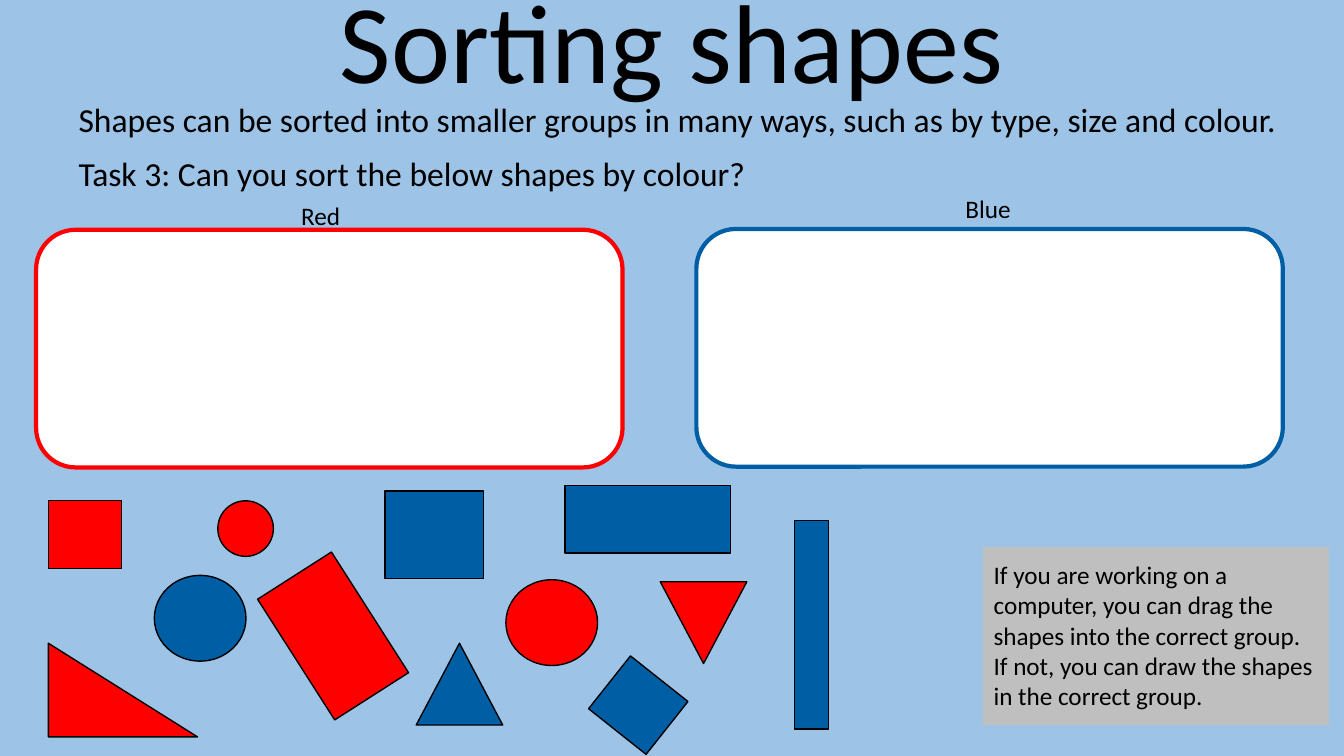
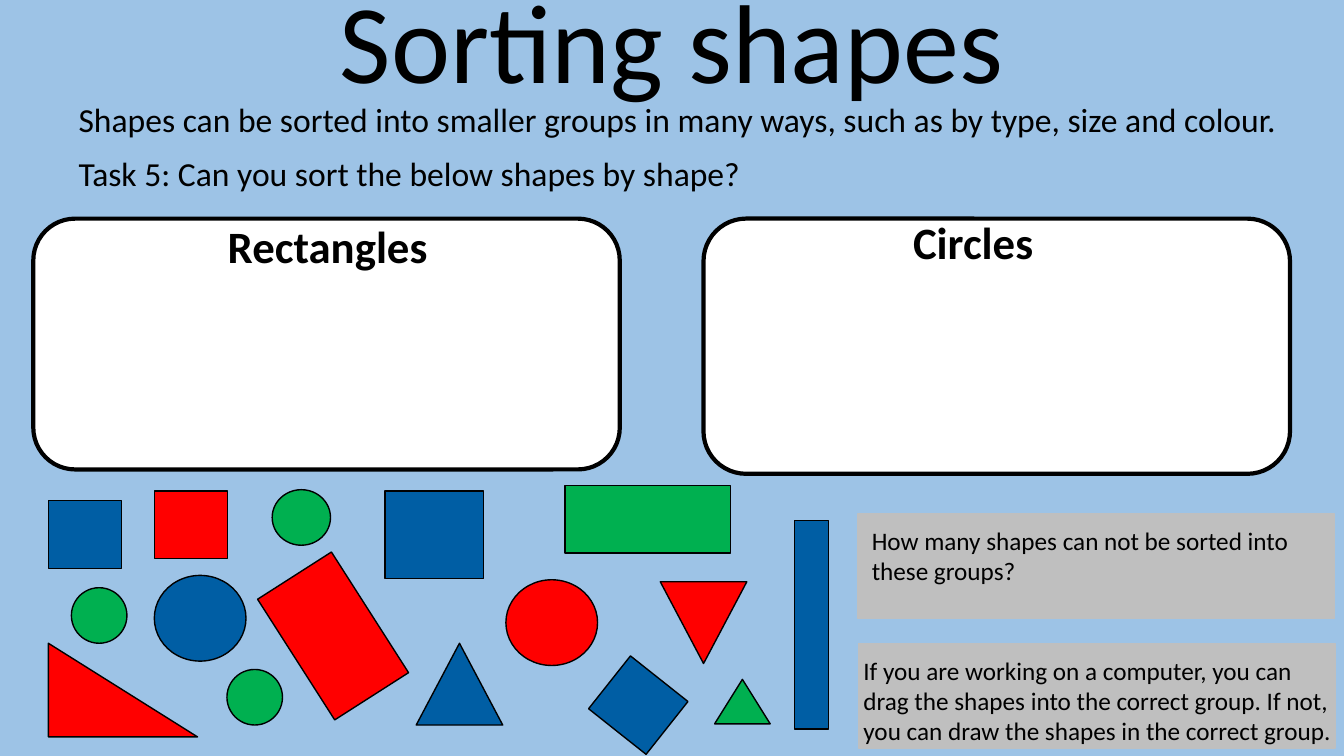
from dataclasses import dataclass, replace

from pptx import Presentation
from pptx.dml.color import RGBColor
from pptx.enum.shapes import MSO_SHAPE
from pptx.enum.text import MSO_AUTO_SIZE, PP_ALIGN
from pptx.util import Cm, Pt

RECT = MSO_SHAPE.RECTANGLE
ROUNDED = MSO_SHAPE.ROUNDED_RECTANGLE
ELLIPSE = MSO_SHAPE.OVAL
TRIANGLE = MSO_SHAPE.ISOSCELES_TRIANGLE
LEFT, CENTER = PP_ALIGN.LEFT, PP_ALIGN.CENTER
GROW = MSO_AUTO_SIZE.SHAPE_TO_FIT_TEXT

FONT = "Calibri"
SKY, WHITE, BLACK, GREY = "9DC3E6", "FFFFFF", "000000", "BFBFBF"
RED, BLUE, GREEN = "FF0000", "005EA4", "00B050"

INTRO = ("Shapes can be sorted into smaller groups in many ways, "
         "such as by type, size and colour.")
DRAG_HINT = ("If you are working on a computer, you can drag the shapes into the "
             "correct group. If not, you can draw the shapes in the correct group.")


@dataclass(frozen=True)
class Figure:
    """A drawn shape; lengths in centimetres."""
    kind: MSO_SHAPE
    left: float
    top: float
    width: float
    height: float
    fill: str
    rotation: float = 0
    apex: float | None = None
    line: str = BLACK
    weight: float = 1


@dataclass(frozen=True)
class Caption:
    """A text box; lengths in centimetres, one string per paragraph."""
    paragraphs: tuple[str, ...]
    left: float
    top: float
    width: float
    height: float
    size: float = 18
    bold: bool = False
    align: PP_ALIGN = LEFT
    wrap: bool = True
    gap: float = 0


@dataclass(frozen=True)
class Task:
    question: str
    figures: tuple[Figure, ...]
    captions: tuple[Caption, ...]


def sorting_box(left: float, top: float, height: float, line: str) -> Figure:
    return Figure(ROUNDED, left, top, 14.78, height, WHITE, line=line, weight=3)


def note_panel(left: float, top: float, width: float, height: float) -> Figure:
    return Figure(RECT, left, top, width, height, GREY, line=GREY)


def small_circle(left: float, top: float, fill: str) -> Figure:
    return Figure(ELLIPSE, left, top, 1.4, 1.4, fill)


def group_heading(name: str, left: float, top: float) -> Caption:
    return Caption((name,), left, top, 10, 1.63, size=32, bold=True)


def group_label(name: str, left: float, top: float) -> Caption:
    return Caption((name,), left, top, 5.97, 1.02)


# Shapes to sort that appear in both tasks
SQUARE = Figure(RECT, 1.22, 12.62, 1.85, 1.7, RED)
WIDE_BAR = Figure(RECT, 15.47, 11, 1.7, 4.17, BLUE, rotation=270)
COMMON_FIGURES = (
    Figure(ELLIPSE, 3.89, 14.5, 2.31, 2.16, BLUE),
    Figure(TRIANGLE, 1.22, 16.21, 3.76, 2.36, RED, apex=0),
    Figure(RECT, 7.29, 14.22, 2.21, 3.61, RED, rotation=327.4),
    Figure(RECT, 9.7, 12.37, 2.49, 2.21, BLUE),
    Figure(TRIANGLE, 16.64, 14.66, 2.18, 2.06, RED, rotation=180),
    Figure(ELLIPSE, 12.75, 14.61, 2.31, 2.16, RED),
    Figure(RECT, 15.16, 16.92, 1.85, 1.7, BLUE, rotation=38.4),
    Figure(TRIANGLE, 10.49, 16.21, 2.18, 2.06, BLUE),
    Figure(RECT, 20.02, 13.11, 0.86, 5.26, BLUE, rotation=180),
)

TASKS = (
    Task(
        "Task 3: Can you sort the below shapes by colour?",
        (
            sorting_box(0.91, 5.79, 5.99, RED),
            sorting_box(17.55, 5.77, 5.99, BLUE),
            SQUARE,
            small_circle(5.49, 12.62, RED),
            WIDE_BAR,
            *COMMON_FIGURES,
            note_panel(24.79, 13.79, 8.69, 4.47),
        ),
        (
            Caption((DRAG_HINT,), 24.79, 13.97, 8.69, 4.11),
            group_label("Blue", 24.08, 4.75),
            group_label("Red", 7.34, 4.93),
        ),
    ),
    Task(
        "Task 5: Can you sort the below shapes by shape?",
        (
            sorting_box(0.84, 5.51, 6.32, BLACK),
            sorting_box(17.73, 5.51, 6.43, BLACK),
            replace(SQUARE, fill=BLUE),
            replace(SQUARE, left=3.89, top=12.37),
            replace(WIDE_BAR, fill=GREEN),
            *COMMON_FIGURES,
            Figure(ELLIPSE, 6.86, 12.34, 1.47, 1.4, GREEN),
            small_circle(5.72, 16.87, GREEN),
            small_circle(1.8, 14.81, GREEN),
            Figure(TRIANGLE, 18.01, 17.12, 1.4, 1.12, GREEN),
            note_panel(21.64, 16.21, 12.01, 2.64),
            note_panel(21.62, 12.95, 12.01, 2.64),
        ),
        (
            Caption((DRAG_HINT,), 21.51, 16.38, 12.36, 2.57),
            group_heading("Rectangles", 5.49, 5.38),
            group_heading("Circles", 22.76, 5.28),
            Caption(("How many shapes can not be sorted into these groups?",),
                    21.72, 13.11, 12.15, 1.8),
        ),
    ),
)


def rgb(value: str) -> RGBColor:
    return RGBColor.from_string(value)


def draw_figure(slide, figure: Figure) -> None:
    shape = slide.shapes.add_shape(
        figure.kind, Cm(figure.left), Cm(figure.top), Cm(figure.width), Cm(figure.height))
    shape.shadow.inherit = False
    shape.rotation = figure.rotation
    if figure.apex is not None:
        shape.adjustments[0] = figure.apex
    shape.fill.solid()
    shape.fill.fore_color.rgb = rgb(figure.fill)
    shape.line.color.rgb = rgb(figure.line)
    shape.line.width = Pt(figure.weight)


def draw_caption(slide, caption: Caption) -> None:
    box = slide.shapes.add_textbox(
        Cm(caption.left), Cm(caption.top), Cm(caption.width), Cm(caption.height))
    frame = box.text_frame
    frame.word_wrap = caption.wrap
    frame.auto_size = GROW
    for index, wording in enumerate(caption.paragraphs):
        paragraph = frame.add_paragraph() if index else frame.paragraphs[0]
        paragraph.text = wording
        paragraph.alignment = caption.align
        if index:
            paragraph.space_before = Pt(caption.gap)
        font = paragraph.font
        font.name = FONT
        font.size = Pt(caption.size)
        font.bold = caption.bold
        font.color.rgb = rgb(BLACK)


def draw_task(slide, task: Task) -> None:
    # Background, title and introduction
    slide.background.fill.solid()
    slide.background.fill.fore_color.rgb = rgb(SKY)
    draw_caption(slide, Caption(("Sorting shapes",), 8.23, -0.84, 17.4, 3.68,
                                size=80, align=CENTER, wrap=False))
    draw_caption(slide, Caption((INTRO, task.question), 1.73, 2.36, 31.67, 2.69,
                                size=24, gap=9.8))
    # Sorting boxes, shapes and panels, then their wording
    for figure in task.figures:
        draw_figure(slide, figure)
    for caption in task.captions:
        draw_caption(slide, caption)


def main() -> None:
    deck = Presentation()
    deck.slide_width, deck.slide_height = Cm(33.87), Cm(19.05)
    blank = deck.slide_layouts[6]
    for task in TASKS:
        draw_task(deck.slides.add_slide(blank), task)
    deck.save("out.pptx")


if __name__ == "__main__":
    main()
